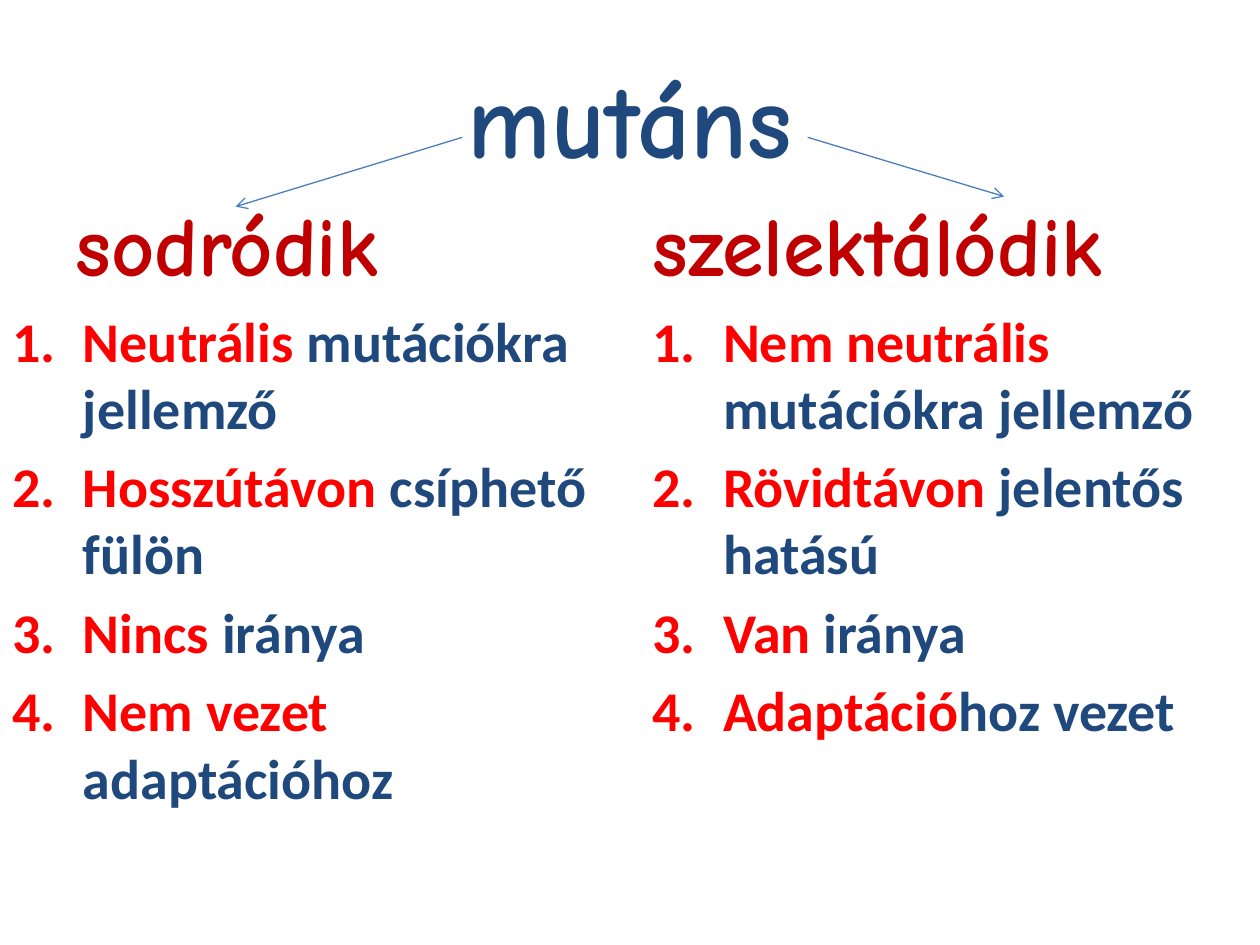
from lxml import etree
from pptx import Presentation
from pptx.dml.color import RGBColor
from pptx.enum import shapes, text
from pptx.oxml.ns import qn
from pptx.util import Inches, Pt

NAVY = RGBColor(0x1F, 0x49, 0x7D)
DARK_RED = RGBColor(0xC0, 0x00, 0x00)
RED = RGBColor(0xFF, 0x00, 0x00)
BLUE = RGBColor(0x4B, 0x7E, 0xBC)
HEAD_FONT, BODY_FONT = "Comic Neue", "Calibri"

# Each point is a highlighted part followed by the rest
DRIFT = [("Neutrális ", "mutációkra jellemző"),
         ("Hosszútávon ", "csíphető fülön"),
         ("Nincs", " iránya"),
         ("Nem vezet ", "adaptációhoz")]
SELECTION = [("Nem neutrális ", "mutációkra jellemző"),
             ("Rövidtávon ", "jelentős hatású"),
             ("Van", " iránya"),
             ("Adaptáció", "hoz vezet")]


def add_run(p, content, size, color, font):
    r = p.add_run()
    r.text = content
    r.font.size, r.font.name, r.font.bold = Pt(size), font, True
    r.font.color.rgb = color


def add_frame(s, box, anchor):
    tf = s.shapes.add_textbox(*map(Inches, box)).text_frame
    tf.word_wrap = True
    tf.vertical_anchor = anchor
    return tf


def add_heading(s, content, box, size, color, align=text.PP_ALIGN.LEFT,
                anchor=text.MSO_ANCHOR.BOTTOM):
    p = add_frame(s, box, anchor).paragraphs[0]
    p.alignment = align
    add_run(p, content, size, color, HEAD_FONT)


def number_paragraph(p, indent=0.56):
    pPr = p._p.get_or_add_pPr()
    pPr.set("marL", str(Inches(indent)))
    pPr.set("indent", str(Inches(-indent)))
    etree.SubElement(pPr, qn("a:buFont"), typeface="+mj-lt")
    etree.SubElement(pPr, qn("a:buAutoNum"), type="arabicPeriod")


def add_points(s, points, box):
    tf = add_frame(s, box, text.MSO_ANCHOR.TOP)
    for i, (key, rest) in enumerate(points):
        p = tf.add_paragraph() if i else tf.paragraphs[0]
        p.space_before = Pt(6.4 if i else 0)
        number_paragraph(p)
        add_run(p, key, 32, RED, BODY_FONT)
        add_run(p, rest, 32, NAVY, BODY_FONT)


def add_column(s, heading, points, box, head_left):
    left, top, width, height = box
    head_height = 0.7
    add_heading(s, heading, (head_left, top, 4.42, head_height), 48, DARK_RED)
    add_points(s, points,
               (left, top + head_height, width, height - head_height))


def add_arrow(s, start, end):
    c = s.shapes.add_connector(shapes.MSO_CONNECTOR.STRAIGHT,
                               *map(Inches, start + end))
    c.line.color.rgb = BLUE
    c.line.width = Pt(0.75)
    etree.SubElement(c.line._get_or_add_ln(), qn("a:tailEnd"), type="arrow")
    etree.SubElement(c._element.spPr, qn("a:effectLst"))


def main():
    prs = Presentation()
    prs.slide_width, prs.slide_height = Inches(10), Inches(7.5)
    s = prs.slides.add_slide(prs.slide_layouts[6])

    # Title
    add_heading(s, "mutáns", (0.5, 0.3, 9, 1.25), 60, NAVY,
                text.PP_ALIGN.CENTER, text.MSO_ANCHOR.MIDDLE)

    # Two outcomes
    add_column(s, "sodródik", DRIFT, (0, 1.68, 4.92, 5.02), 0.5)
    add_column(s, "szelektálódik", SELECTION, (5.08, 1.68, 4.92, 5.02), 5.08)

    # Arrows from the title to the outcomes
    add_arrow(s, (3.67, 1.09), (1.87, 1.64))
    add_arrow(s, (6.41, 1.09), (7.97, 1.56))

    prs.save("out.pptx")


if __name__ == "__main__":
    main()
